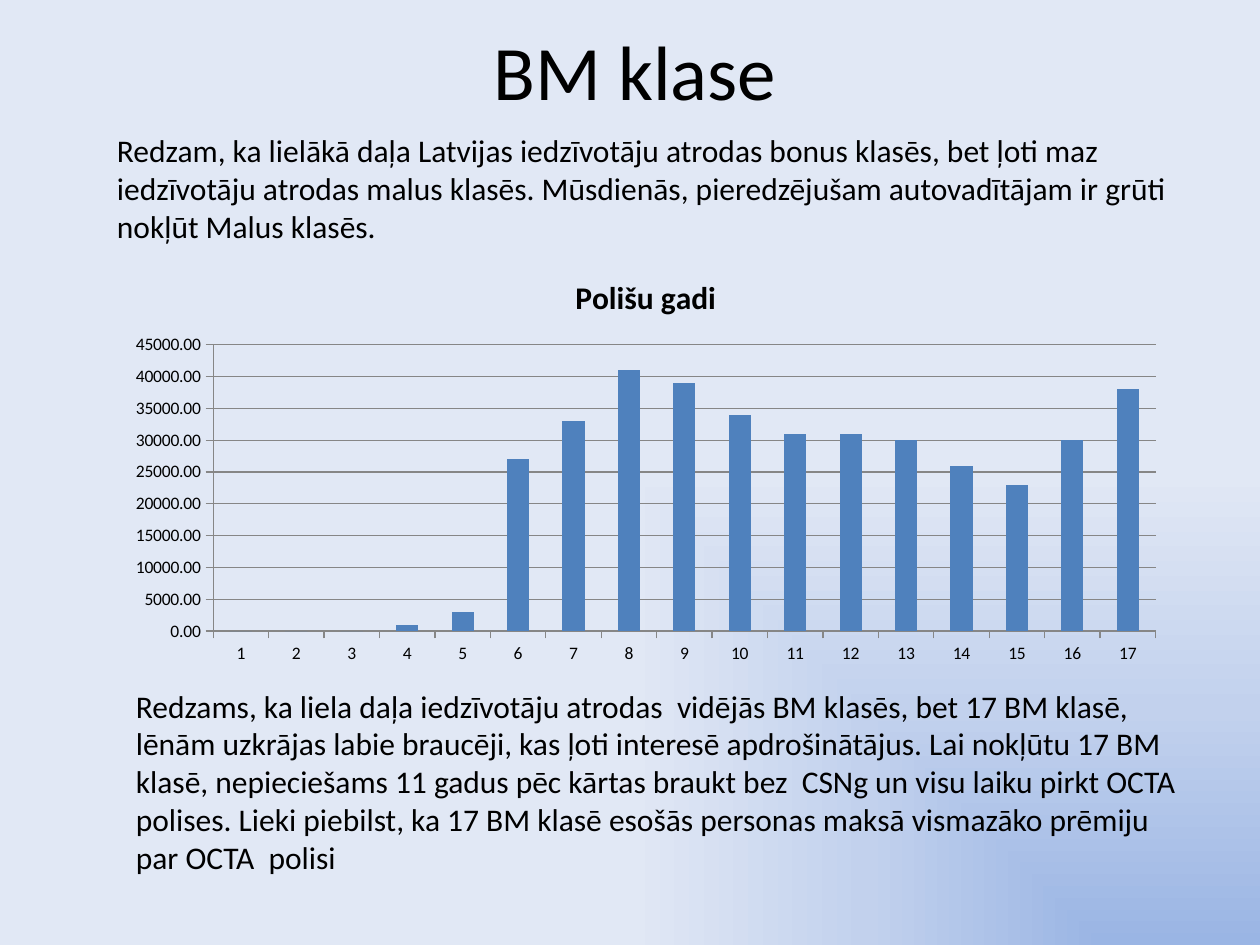
from pptx import Presentation
from pptx.chart.data import CategoryChartData
from pptx.dml.color import RGBColor
from pptx.enum.chart import XL_CHART_TYPE, XL_TICK_LABEL_POSITION, XL_TICK_MARK
from pptx.enum.text import MSO_ANCHOR, PP_ALIGN
from pptx.oxml import parse_xml
from pptx.oxml.ns import nsdecls, qn
from pptx.util import Inches, Pt

COLUMN = XL_CHART_TYPE.COLUMN_CLUSTERED
OUT, NONE = XL_TICK_MARK.OUTSIDE, XL_TICK_MARK.NONE
LOW = XL_TICK_LABEL_POSITION.LOW
LEFT, CENTER = PP_ALIGN.LEFT, PP_ALIGN.CENTER
TOP, MIDDLE = MSO_ANCHOR.TOP, MSO_ANCHOR.MIDDLE

FONT, INK, BAR, GRID = "Calibri", "000000", "4F81BD", "868686"
STOPS = [(0, "9AB5E4"), (50, "C2D1ED"), (100, "E1E8F5")]

TITLE = "BM klase"
TITLE_BOX = (0.75, 0, 8.58, 1.11)
NOTES = [
    ((0.83, 0.99, 8.58, 1.01),
     "Redzam, ka lielākā daļa Latvijas iedzīvotāju atrodas bonus klasēs, "
     "bet ļoti maz  iedzīvotāju atrodas malus klasēs. Mūsdienās, "
     "pieredzējušam autovadītājam ir grūti nokļūt Malus klasēs."),
    ((0.98, 5.4, 8.58, 1.61),
     "Redzams, ka liela daļa iedzīvotāju atrodas  vidējās BM klasēs, bet "
     "17 BM klasē, lēnām uzkrājas labie braucēji, kas ļoti interesē "
     "apdrošinātājus. Lai nokļūtu 17 BM klasē, nepieciešams 11 gadus pēc "
     "kārtas braukt bez  CSNg un visu laiku pirkt OCTA polises. Lieki "
     "piebilst, ka 17 BM klasē esošās personas maksā vismazāko prēmiju "
     "par OCTA  polisi"),
]
CHART_BOX = (0.91, 2.02, 8.43, 3.31)
SERIES = "Polišu gadi"
YEARS = [0, 0, 0, 1000, 3000, 27000, 33000, 41000, 39000, 34000, 31000,
         31000, 30000, 26000, 23000, 30000, 38000]


def color(code):
    return RGBColor.from_string(code)


def style(font, size, bold=False):
    font.name, font.size, font.bold = FONT, Pt(size), bold
    font.color.rgb = color(INK)


def write(frame, text, size=18, align=LEFT, anchor=TOP, bold=False):
    frame.word_wrap = True
    frame.vertical_anchor = anchor
    para = frame.paragraphs[0]
    para.alignment = align
    run = para.add_run()
    run.text = text
    style(run.font, size, bold)


def paint(slide):
    """Fill the background with a gradient from the lower right corner."""
    slide.background.fill.solid()
    stops = "".join(
        f'<a:gs pos="{pos * 1000}"><a:srgbClr val="{code}"/></a:gs>'
        for pos, code in STOPS)
    grad = parse_xml(
        f'<a:gradFill {nsdecls("a")} rotWithShape="1">'
        f'<a:gsLst>{stops}</a:gsLst><a:path path="rect">'
        '<a:fillToRect l="100000" t="100000"/></a:path></a:gradFill>')
    props = next(slide.element.iter(qn("p:bgPr")))
    props.replace(props[0], grad)


def rule(line):
    line.color.rgb = color(GRID)
    line.width = Pt(0.75)


def plot_years(slide):
    data = CategoryChartData(number_format="0.00")
    data.categories = [str(n) for n in range(1, len(YEARS) + 1)]
    data.add_series(SERIES, YEARS)
    box = map(Inches, CHART_BOX)
    chart = slide.shapes.add_chart(COLUMN, *box, data).chart
    style(chart.font, 10)
    chart.has_legend = False
    chart.has_title = True
    write(chart.chart_title.text_frame, SERIES, align=CENTER, bold=True)
    chart.chart_title.include_in_layout = False

    plot = chart.plots[0]
    plot.gap_width = 150
    plot.vary_by_categories = False
    fill = plot.series[0].format.fill
    fill.solid()
    fill.fore_color.rgb = color(BAR)

    for axis in (chart.category_axis, chart.value_axis):
        axis.major_tick_mark, axis.minor_tick_mark = OUT, NONE
        rule(axis.format.line)
    chart.category_axis.tick_label_position = LOW
    values = chart.value_axis
    values.minimum_scale, values.maximum_scale = 0, 45000
    values.major_unit = 5000
    values.tick_labels.number_format = "0.00"
    values.tick_labels.number_format_is_linked = False
    values.has_major_gridlines = True
    rule(values.major_gridlines.format.line)


def main():
    deck = Presentation()
    deck.slide_width, deck.slide_height = Inches(10), Inches(7.5)
    slide = deck.slides.add_slide(deck.slide_layouts.get_by_name("Title Only"))
    paint(slide)

    title = slide.shapes.title
    title.left, title.top, title.width, title.height = map(Inches, TITLE_BOX)
    write(title.text_frame, TITLE, size=44, align=CENTER, anchor=MIDDLE)
    for box, text in NOTES:
        note = slide.shapes.add_textbox(*map(Inches, box))
        write(note.text_frame, text)
    plot_years(slide)
    deck.save("out.pptx")


if __name__ == "__main__":
    main()
